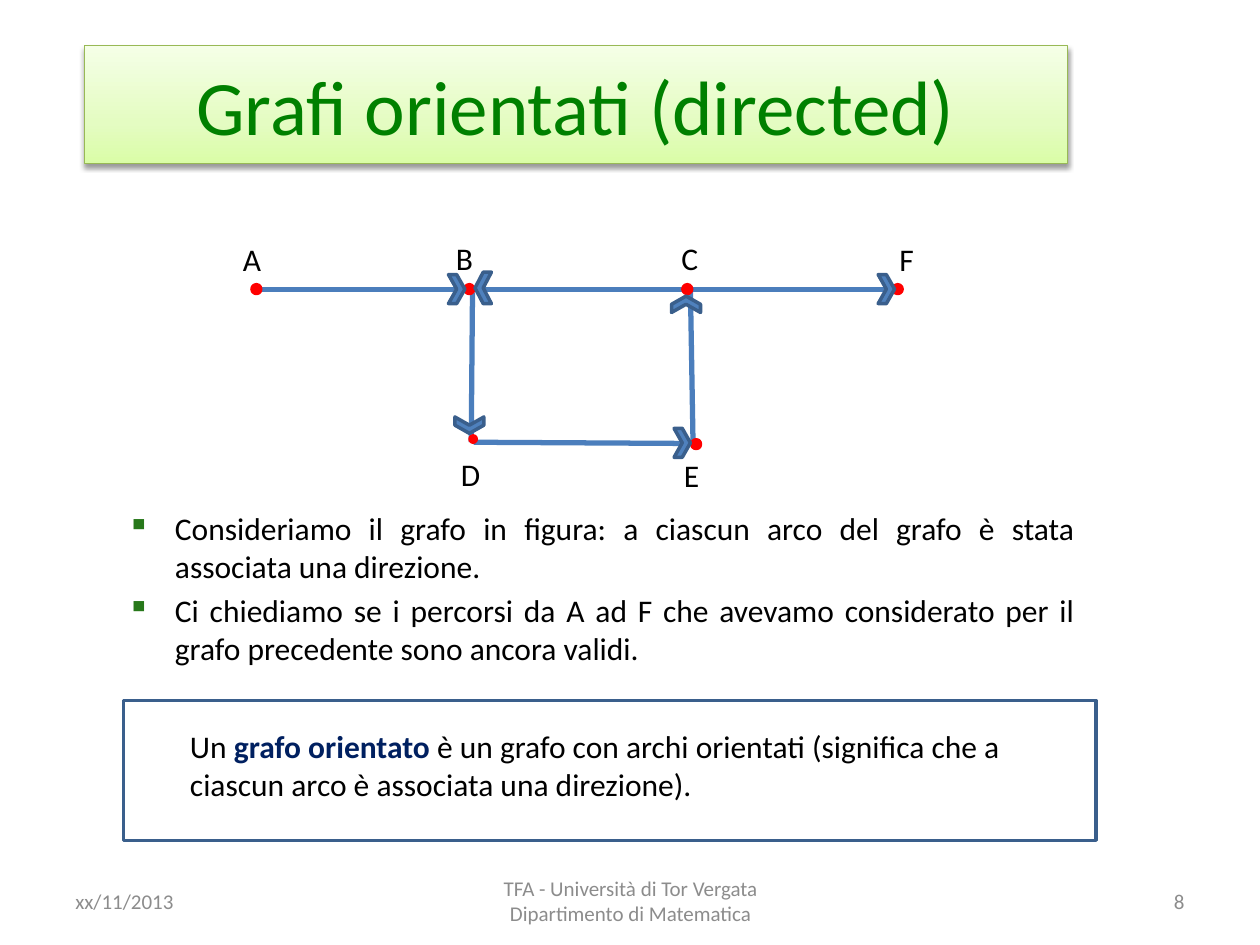
"""Build a slide that introduces directed graphs."""
from copy import deepcopy
from typing import NamedTuple

from lxml import etree
from pptx import Presentation
from pptx.dml.color import RGBColor
from pptx.enum import shapes as sh, text as tx
from pptx.oxml import ns
from pptx.util import Inches, Pt

GREEN = RGBColor(0x00, 0x80, 0x00)
PALE = RGBColor(0xF5, 0xFF, 0xE7)
LIGHT = RGBColor(0xE4, 0xFC, 0xC2)
LIME = RGBColor(0xDA, 0xFD, 0xA7)
EDGE = RGBColor(0x98, 0xB9, 0x55)
GRAY = RGBColor(0x8C, 0x8C, 0x8C)
BLACK = RGBColor(0, 0, 0)
NAVY = RGBColor(0x00, 0x20, 0x60)
RED = RGBColor(0xFF, 0, 0)
ARC = RGBColor(0x4B, 0x7E, 0xBC)
BLUE = RGBColor(0x4F, 0x81, 0xBD)
DARK = RGBColor(0x3A, 0x5F, 0x8C)
LEFT, MID = tx.PP_ALIGN.LEFT, tx.PP_ALIGN.CENTER
RIGHT, FULL = tx.PP_ALIGN.RIGHT, tx.PP_ALIGN.JUSTIFY


class Box(NamedTuple):
    x: float
    y: float
    w: float
    h: float


class Node(NamedTuple):
    name: str
    x: float
    y: float
    size: float
    left: float
    top: float


class Arc(NamedTuple):
    x: float
    y: float
    x2: float
    y2: float


class Head(NamedTuple):
    x: float
    y: float
    turn: int = 0
    h: float = 0.23


class Foot(NamedTuple):
    x: float
    w: float
    align: tx.PP_ALIGN
    lines: tuple


NODES = [
    Node("A", 2, 2.26, 0.07, 1.83, 1.86),
    Node("B", 3.69, 2.26, 0.07, 3.52, 1.85),
    Node("C", 5.42, 2.26, 0.07, 5.31, 1.85),
    Node("F", 7.09, 2.26, 0.07, 7.04, 1.86),
    Node("D", 3.73, 3.46, 0.05, 3.56, 3.56),
    Node("E", 5.49, 3.49, 0.07, 5.33, 3.57),
]
ARCS = [
    Arc(2.06, 2.3, 3.72, 2.3),
    Arc(3.76, 2.3, 5.42, 2.3),
    Arc(5.49, 2.3, 7.09, 2.3),
    Arc(3.75, 2.32, 3.74, 3.51),
    Arc(3.76, 3.51, 5.49, 3.52),
    Arc(5.48, 2.32, 5.5, 3.5),
]
HEADS = [
    Head(3.56, 2.18),
    Head(3.77, 2.16, 180, 0.25),
    Head(6.97, 2.18),
    Head(3.66, 3.26, 90),
    Head(5.35, 3.4),
    Head(5.38, 2.3, 270),
]
FEET = [
    Foot(0.5, 2.33, LEFT, ("xx/11/2013",)),
    Foot(3.42, 3.17, MID,
         ("TFA - Università di Tor Vergata", "Dipartimento di Matematica")),
    Foot(7.17, 2.33, RIGHT, ("8",)),
]
POINTS = [
    "Consideriamo il grafo in figura: a ciascun arco del grafo è stata "
    "associata una direzione.",
    "Ci chiediamo se i percorsi da A ad F che avevamo considerato per il "
    "grafo precedente sono ancora validi.",
]


def span(box: Box) -> list:
    return [Inches(n) for n in box]


def add_run(para, words: str, size: int = 18, color: RGBColor = BLACK,
            bold: bool = False) -> None:
    run = para.add_run()
    run.text = words
    font = run.font
    font.name, font.size, font.bold = "Calibri", Pt(size), bold
    font.color.rgb = color


def add_text(slide, box: Box, wrap: bool = True):
    frame = slide.shapes.add_textbox(*span(box)).text_frame
    frame.word_wrap = wrap
    return frame


def add_form(slide, kind, box: Box, line: RGBColor, fill=None):
    form = slide.shapes.add_shape(kind, *span(box))
    form.shadow.inherit = False
    if fill is None:
        form.fill.background()
    else:
        form.fill.solid()
        form.fill.fore_color.rgb = fill
    form.line.color.rgb = line
    form.line.width = Pt(2)
    return form


def add_title(slide) -> None:
    title = slide.shapes.title
    title.left, title.top, title.width, title.height = span(
        Box(0.67, 0.36, 7.8, 0.94))
    title.fill.gradient()
    title.fill.gradient_angle = 90
    props = title._element.spPr
    stops = props.find(".//" + ns.qn("a:gsLst"))
    stops.insert(1, deepcopy(stops[0]))
    tints = (0, LIME), (0.35, LIGHT), (1, PALE)
    for stop, (place, tint) in zip(title.fill.gradient_stops, tints):
        stop.position = place
        stop.color.rgb = tint
    title.line.color.rgb = EDGE
    title.line.width = Pt(0.75)
    title.shadow.inherit = False
    glow = etree.SubElement(
        props.find(ns.qn("a:effectLst")), ns.qn("a:outerShdw"),
        blurRad=str(Pt(3.1)), dist=str(Pt(1.6)), dir="5400000", rotWithShape="0")
    shade = etree.SubElement(glow, ns.qn("a:srgbClr"), val="000000")
    etree.SubElement(shade, ns.qn("a:alpha"), val="38000")
    frame = title.text_frame
    frame.vertical_anchor = tx.MSO_ANCHOR.MIDDLE
    para = frame.paragraphs[0]
    para.alignment = MID
    add_run(para, "Grafi orientati (directed)", 44, GREEN)


def add_arc(slide, arc: Arc) -> None:
    line = slide.shapes.add_connector(sh.MSO_CONNECTOR.STRAIGHT, *span(arc))
    line.line.color.rgb = ARC
    line.line.width = Pt(3)
    etree.SubElement(line._element.spPr, ns.qn("a:effectLst"))


def add_node(slide, node: Node) -> None:
    add_form(slide, sh.MSO_SHAPE.OVAL,
             Box(node.x, node.y, node.size, node.size), RED, RED)
    frame = add_text(slide, Box(node.left, node.top, 0.34, 0.4), False)
    add_run(frame.paragraphs[0], node.name)


def add_head(slide, head: Head) -> None:
    form = add_form(slide, sh.MSO_SHAPE.CHEVRON,
                    Box(head.x, head.y, 0.13, head.h), DARK, BLUE)
    form.rotation = head.turn


def add_points(slide) -> None:
    frame = add_text(slide, Box(0.91, 3.99, 7.72, 1.42))
    for i, words in enumerate(POINTS):
        para = frame.add_paragraph() if i else frame.paragraphs[0]
        para.alignment = FULL
        if i:
            para.space_before = Pt(3.6)
        props = para._p.get_or_add_pPr()
        props.set("marL", str(Inches(0.38)))
        props.set("indent", str(-Inches(0.38)))
        tint = etree.SubElement(props, ns.qn("a:buClr"))
        etree.SubElement(tint, ns.qn("a:srgbClr"), val="27781A")
        etree.SubElement(props, ns.qn("a:buChar"), char="▪")
        add_run(para, words)


def add_note(slide) -> None:
    add_form(slide, sh.MSO_SHAPE.RECTANGLE, Box(0.98, 5.56, 7.72, 1.11), DARK)
    para = add_text(slide, Box(1.41, 5.72, 6.93, 0.85)).paragraphs[0]
    add_run(para, "Un ")
    add_run(para, "grafo orientato ", color=NAVY, bold=True)
    add_run(para, "è un grafo con archi orientati (significa che a ciascun "
                  "arco è associata una direzione).")


def add_foot(slide, foot: Foot) -> None:
    frame = add_text(slide, Box(foot.x, 6.95, foot.w, 0.4))
    frame.vertical_anchor = tx.MSO_ANCHOR.MIDDLE
    para = frame.paragraphs[0]
    para.alignment = foot.align
    for i, words in enumerate(foot.lines):
        if i:
            para.add_line_break()
        add_run(para, words, 12, GRAY)


def main() -> None:
    deck = Presentation()
    deck.slide_width, deck.slide_height = Inches(10), Inches(7.5)
    slide = deck.slides.add_slide(deck.slide_layouts[5])
    add_title(slide)
    for draw, items in ((add_arc, ARCS), (add_node, NODES),
                        (add_head, HEADS), (add_foot, FEET)):
        for item in items:
            draw(slide, item)
    add_points(slide)
    add_note(slide)
    deck.save("out.pptx")


if __name__ == "__main__":
    main()
